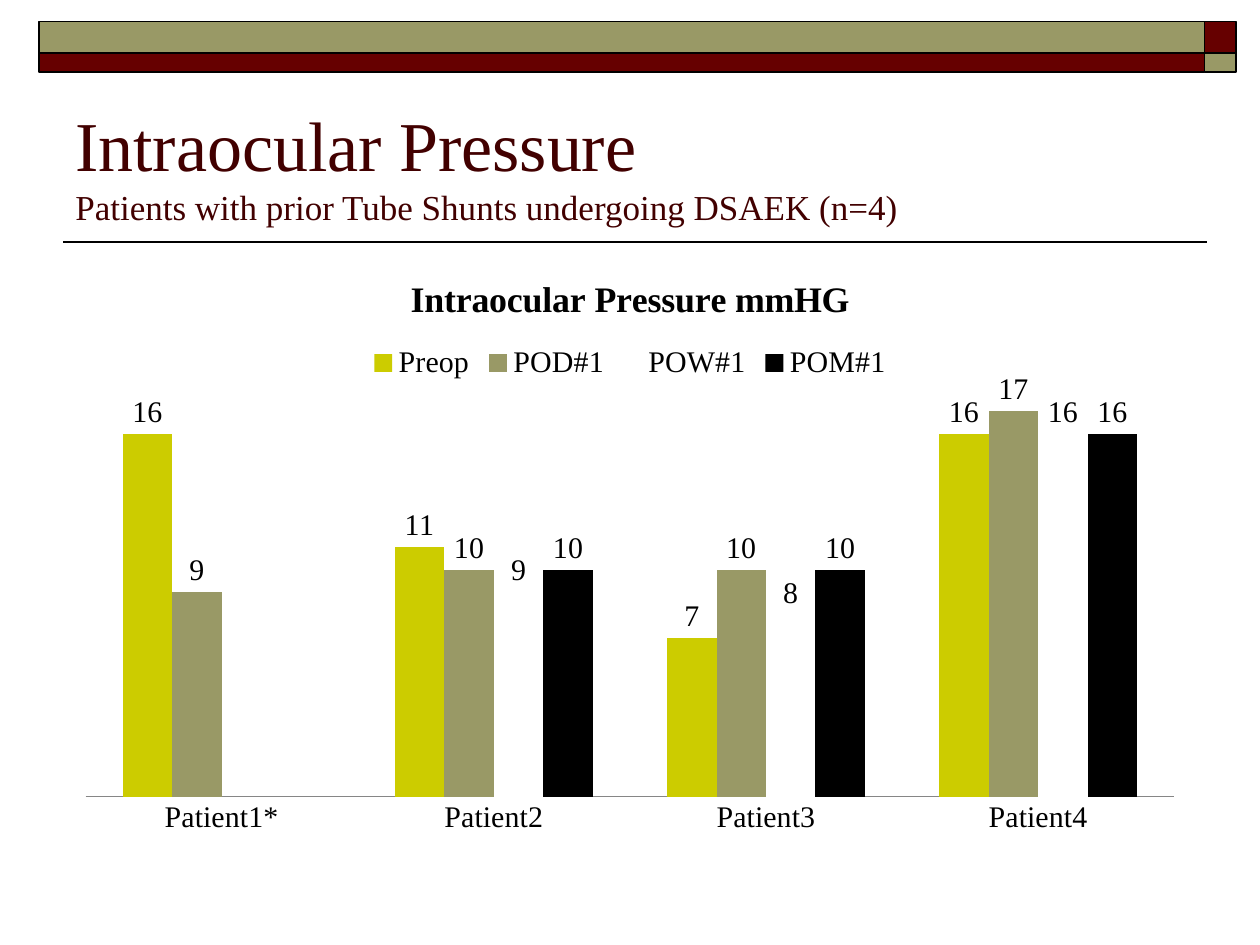
from dataclasses import dataclass

from lxml.etree import SubElement
from pptx import Presentation
from pptx.chart.data import CategoryChartData
from pptx.dml.color import RGBColor
from pptx.enum.chart import (XL_CHART_TYPE, XL_LABEL_POSITION,
                             XL_LEGEND_POSITION, XL_TICK_MARK)
from pptx.enum.shapes import MSO_CONNECTOR, MSO_SHAPE
from pptx.enum.text import MSO_ANCHOR
from pptx.oxml.ns import qn
from pptx.util import Inches, Pt


@dataclass(frozen=True)
class Theme:
    font: str = "Times New Roman"
    black: RGBColor = RGBColor(0x00, 0x00, 0x00)
    white: RGBColor = RGBColor(0xFF, 0xFF, 0xFF)
    maroon: RGBColor = RGBColor(0x66, 0x00, 0x00)
    heading: RGBColor = RGBColor(0x42, 0x00, 0x00)
    olive: RGBColor = RGBColor(0x99, 0x99, 0x66)
    lime: RGBColor = RGBColor(0xCC, 0xCC, 0x00)
    axis: RGBColor = RGBColor(0x86, 0x86, 0x86)
    title_size: Pt = Pt(40)
    subtitle_size: Pt = Pt(20)
    chart_title_size: Pt = Pt(20.5)
    chart_size: Pt = Pt(17.1)


theme = Theme()


def style_font(font, size, color, bold=False):
    font.name = theme.font
    font.size = size
    font.bold = bold
    font.color.rgb = color


prs = Presentation()
prs.slide_width, prs.slide_height = Inches(10), Inches(7.5)
slide = prs.slides.add_slide(prs.slide_layouts[6])

# Header band: two rows whose colours swap in the right-hand column
columns = [(0.31, 9.25), (9.56, 0.25)]
rows = [(0.17, 0.25, (theme.olive, theme.maroon)),
        (0.42, 0.15, (theme.maroon, theme.olive))]
for top, height, colors in rows:
    for (left, width), color in zip(columns, colors):
        band = slide.shapes.add_shape(MSO_SHAPE.RECTANGLE, Inches(left), Inches(top),
                                      Inches(width), Inches(height))
        band.shadow.inherit = False
        band.fill.solid()
        band.fill.fore_color.rgb = color
        band.line.color.rgb = theme.black
        band.line.width = Pt(1)

rule = slide.shapes.add_connector(MSO_CONNECTOR.STRAIGHT, Inches(0.5), Inches(1.92),
                                  Inches(9.58), Inches(1.92))
rule.line.color.rgb = theme.black
rule.line.width = Pt(1)
SubElement(rule._element.spPr, qn("a:effectLst"))

# Heading
heading = slide.shapes.add_textbox(Inches(0.5), Inches(0.73), Inches(9), Inches(1.03)).text_frame
heading.word_wrap = True
heading.vertical_anchor = MSO_ANCHOR.TOP
heading.margin_top, heading.margin_bottom = Inches(0.08), 0
heading.text = "Intraocular Pressure\nPatients with prior Tube Shunts undergoing DSAEK (n=4)"
for line, size in zip(heading.paragraphs, (theme.title_size, theme.subtitle_size)):
    style_font(line.font, size, theme.heading)

# Pressure chart
visits = [("Preop", (16, 11, 7, 16), theme.lime),
          ("POD#1", (9, 10, 10, 17), theme.olive),
          ("POW#1", (None, 9, 8, 16), theme.white),
          ("POM#1", (None, 10, 10, 16), theme.black)]
pressures = CategoryChartData()
pressures.categories = ["Patient1*", "Patient2", "Patient3", "Patient4"]
for name, values, _ in visits:
    pressures.add_series(name, values)

chart = slide.shapes.add_chart(XL_CHART_TYPE.COLUMN_CLUSTERED, Inches(0.5), Inches(2),
                               Inches(9), Inches(4.7), pressures).chart
style_font(chart.font, theme.chart_size, theme.black)

chart.has_title = True
chart.chart_title.include_in_layout = False
chart_title = chart.chart_title.text_frame
chart_title.text = "Intraocular Pressure mmHG"
style_font(chart_title.paragraphs[0].font, theme.chart_title_size, theme.black, bold=True)

chart.has_legend = True
chart.legend.position = XL_LEGEND_POSITION.TOP
chart.legend.include_in_layout = False

patient_axis = chart.category_axis
patient_axis.major_tick_mark = XL_TICK_MARK.NONE
patient_axis.format.line.color.rgb = theme.axis
patient_axis.format.line.width = Pt(0.75)
pressure_axis = chart.value_axis
pressure_axis.visible = False
pressure_axis.has_major_gridlines = False
pressure_axis.minimum_scale, pressure_axis.maximum_scale = 0, 18

plot = chart.plots[0]
plot.vary_by_categories = False
plot.gap_width, plot.overlap = 150, 0
for series, (_, _, color) in zip(plot.series, visits):
    series.format.fill.solid()
    series.format.fill.fore_color.rgb = color
    series.format.line.fill.background()
    series.invert_if_negative = False
    series.data_labels.show_value = True
    series.data_labels.position = XL_LABEL_POSITION.OUTSIDE_END

# Fixed inner plot area, as fractions of the chart
plot_area = chart._chartSpace.chart.plotArea
for old_layout in plot_area.findall(qn("c:layout")):
    plot_area.remove(old_layout)
layout = SubElement(plot_area, qn("c:layout"))
plot_area.insert(0, layout)
manual = SubElement(layout, qn("c:manualLayout"))
for tag, value in [("layoutTarget", "inner"), ("xMode", "edge"), ("yMode", "edge"),
                   ("x", 0.02), ("y", 0.23), ("w", 0.96), ("h", 0.69)]:
    SubElement(manual, qn(f"c:{tag}")).set("val", str(value))

prs.save("out.pptx")
